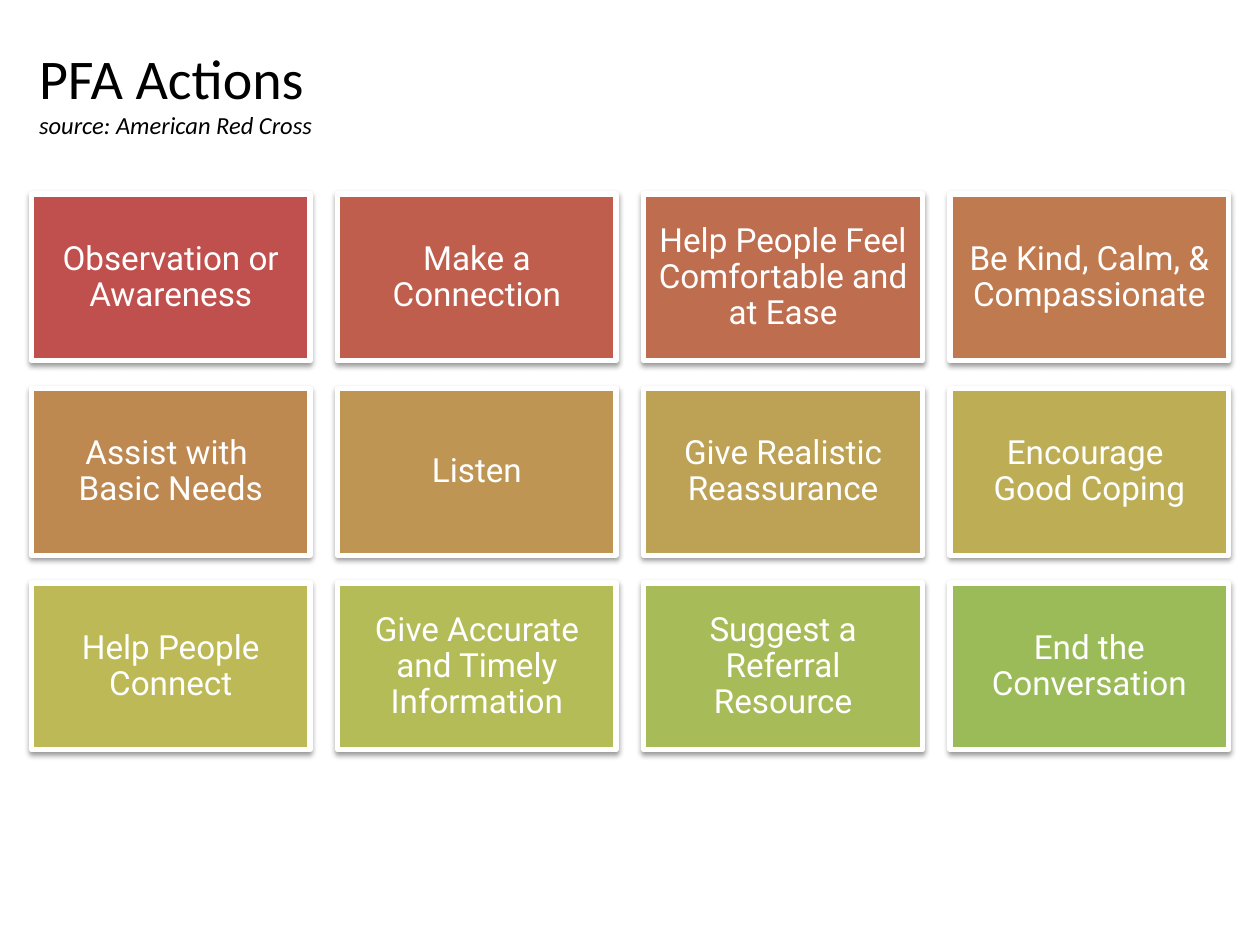
from copy import deepcopy
from dataclasses import dataclass

from lxml.etree import SubElement
from pptx import Presentation
from pptx.dml.color import RGBColor
from pptx.enum.shapes import MSO_SHAPE
from pptx.enum.text import MSO_ANCHOR, MSO_AUTO_SIZE, PP_ALIGN
from pptx.oxml.ns import qn
from pptx.util import Inches, Pt


@dataclass(frozen=True)
class Theme:
    ink: str = "000000"
    light: str = "FFFFFF"
    head: str = "Calibri"
    body: str = "Roboto"
    title: int = 32
    source: int = 14
    label: int = 19
    edge: int = 3


THEME = Theme()
COLS, ROWS, GAP, INSET = 4, 3, 0.22, 0.08
ACTIONS = [
    ("Observation or Awareness", "C0504D"),
    ("Make a Connection", "C05E4E"),
    ("Help People Feel Comfortable and at Ease", "BF6D4F"),
    ("Be Kind, Calm, & Compassionate", "BF7A50"),
    ("Assist with \vBasic Needs", "BE8851"),
    ("Listen", "BE9553"),
    ("Give Realistic Reassurance", "BDA154"),
    ("Encourage \vGood Coping", "BDAE55"),
    ("Help People Connect", "BCB956"),
    ("Give Accurate and Timely Information", "B3BC57"),
    ("Suggest a Referral Resource", "A7BB58"),
    ("End the Conversation", "9BBB59"),
]


def style(run, face, size, color, italic=False):
    font = run.font
    font.name, font.size, font.italic = face, Pt(size), italic
    font.color.rgb = RGBColor.from_string(color)


def match_breaks(para):
    for mark in para._p.findall(qn("a:br")):
        mark.append(deepcopy(para.runs[0]._r.rPr))


def add_shadow(shape):
    shape.shadow.inherit = False
    effects = shape._element.spPr.find(qn("a:effectLst"))
    outer = SubElement(effects, qn("a:outerShdw"), blurRad=str(Pt(3.1)),
                       dist=str(Pt(1.6)), dir="5400000", rotWithShape="0")
    color = SubElement(outer, qn("a:srgbClr"), val=THEME.ink)
    SubElement(color, qn("a:alpha"), val="38000")


def add_title(slide, left, top, width, height):
    title = slide.shapes.title
    title.left, title.top = Inches(left), Inches(top)
    title.width, title.height = Inches(width), Inches(height)
    frame = title.text_frame
    frame.auto_size = MSO_AUTO_SIZE.NONE
    frame.vertical_anchor = MSO_ANCHOR.MIDDLE
    para = frame.paragraphs[0]
    para.text = "PFA Actions \vsource: American Red Cross"
    para.alignment = PP_ALIGN.LEFT
    name, source = para.runs
    style(name, THEME.head, THEME.title, THEME.ink)
    style(source, THEME.head, THEME.source, THEME.ink, italic=True)
    match_breaks(para)


def add_card(group, text, color, left, top, width, height):
    card = group.shapes.add_shape(MSO_SHAPE.RECTANGLE, Inches(left), Inches(top),
                                  Inches(width), Inches(height))
    card.fill.solid()
    card.fill.fore_color.rgb = RGBColor.from_string(color)
    card.line.color.rgb = RGBColor.from_string(THEME.light)
    card.line.width = Pt(THEME.edge)
    add_shadow(card)
    frame = card.text_frame
    frame.word_wrap = True
    frame.vertical_anchor = MSO_ANCHOR.MIDDLE
    frame.margin_left = frame.margin_right = Inches(INSET)
    frame.margin_top = frame.margin_bottom = Inches(INSET)
    para = frame.paragraphs[0]
    para.text = text
    para.alignment = PP_ALIGN.CENTER
    para.line_spacing = 0.9
    for run in para.runs:
        style(run, THEME.body, THEME.label, THEME.light)
    match_breaks(para)


def add_grid(slide, left, top, width, height):
    group = slide.shapes.add_group_shape()
    wide = (width - (COLS - 1) * GAP) / COLS
    high = (height - (ROWS - 1) * GAP) / ROWS
    for index, (text, color) in enumerate(ACTIONS):
        row, col = divmod(index, COLS)
        add_card(group, text, color, left + col * (wide + GAP),
                 top + row * (high + GAP), wide, high)


def main():
    deck = Presentation()
    deck.slide_width, deck.slide_height = Inches(10), Inches(7.5)
    slide = deck.slides.add_slide(deck.slide_layouts.get_by_name("Title Only"))
    add_title(slide, 0.21, 0.34, 8.55, 0.77)
    add_grid(slide, 0.25, 1.54, 9.5, 4.41)
    deck.save("out.pptx")


if __name__ == "__main__":
    main()
